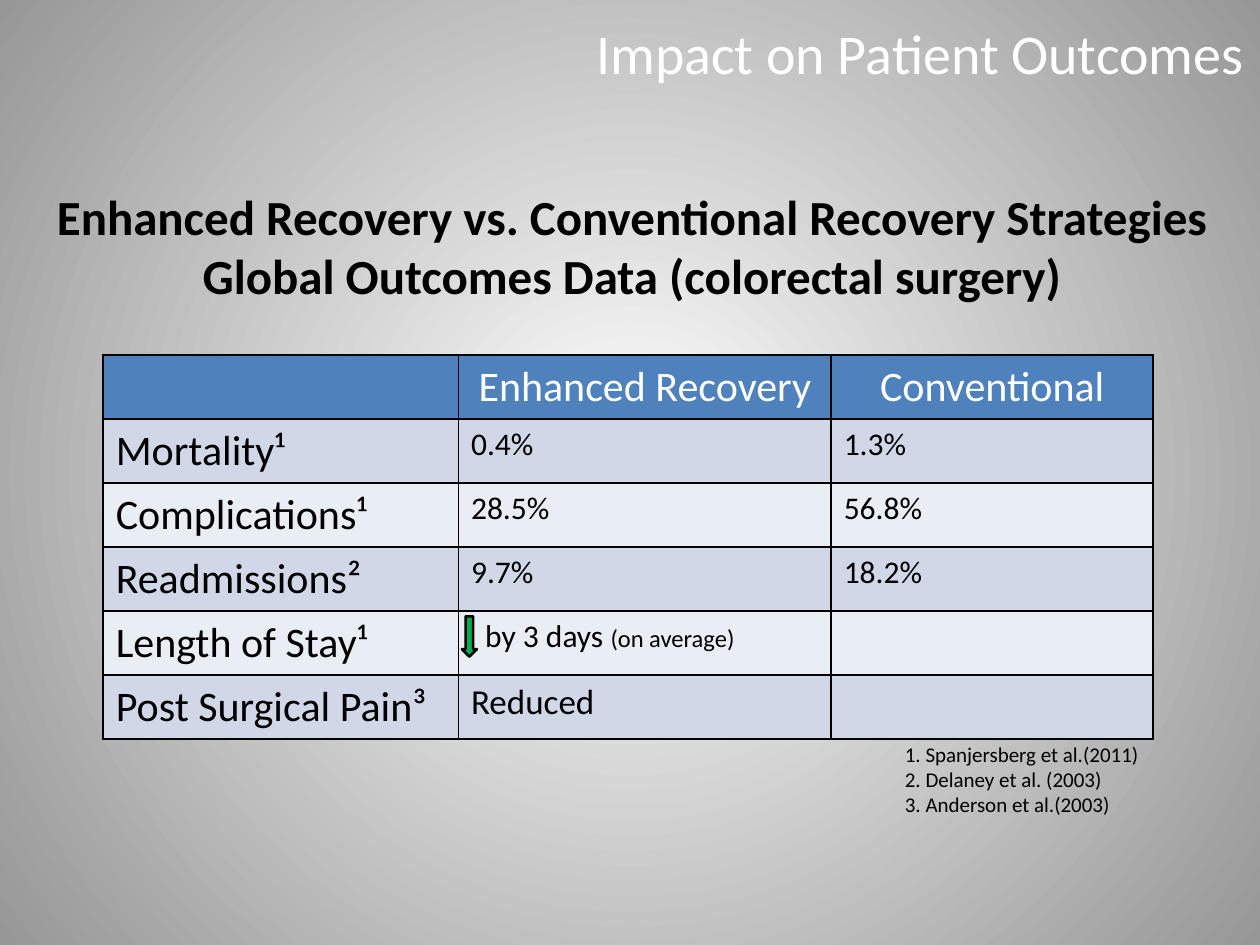
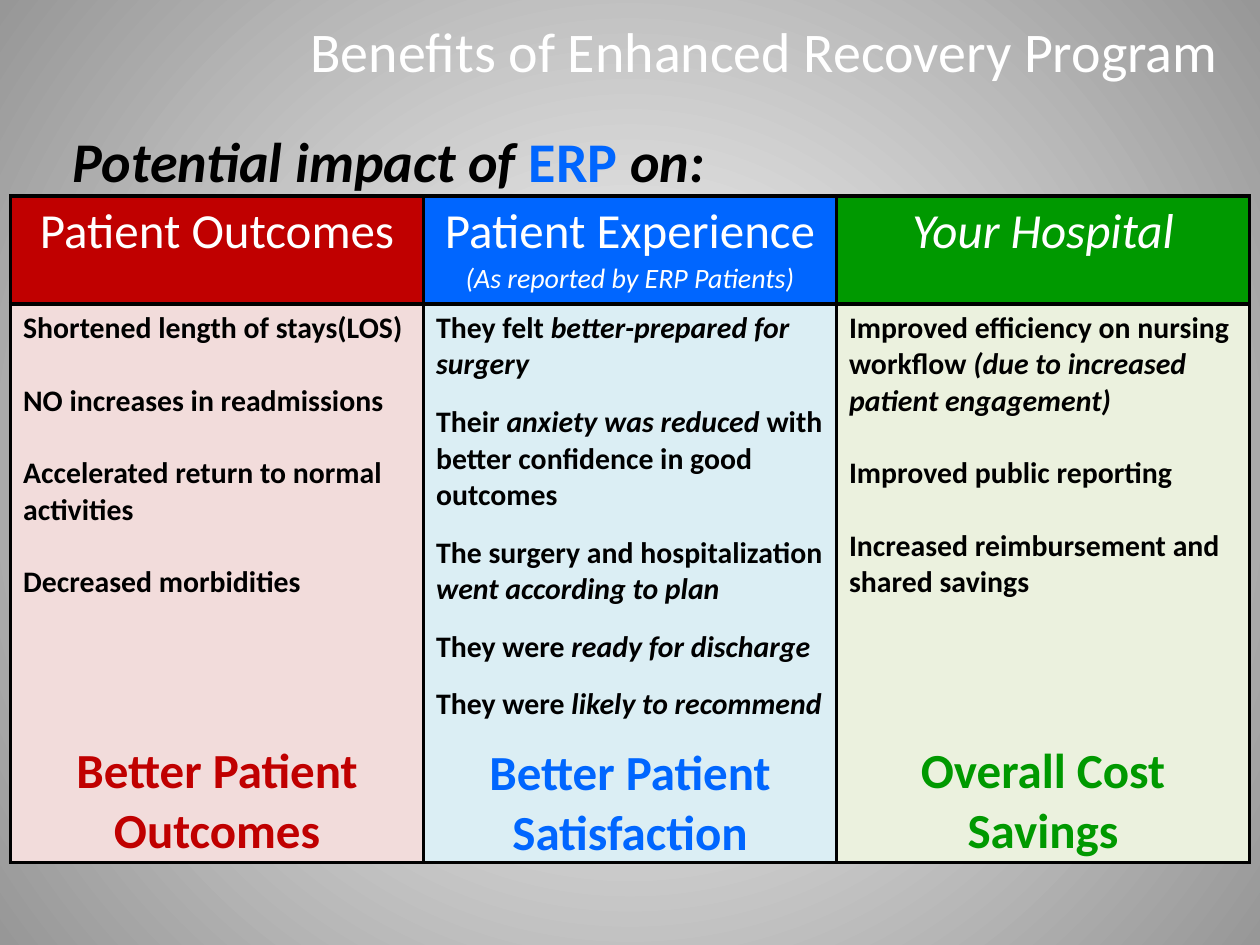
from collections import namedtuple
from dataclasses import dataclass

from lxml import etree
from pptx import Presentation
from pptx.dml.color import RGBColor
from pptx.enum.shapes import MSO_SHAPE
from pptx.enum.text import PP_ALIGN
from pptx.oxml import parse_xml
from pptx.oxml.ns import qn
from pptx.util import Pt

LEFT, CENTER, RIGHT = PP_ALIGN.LEFT, PP_ALIGN.CENTER, PP_ALIGN.RIGHT
DOWN_ARROW = MSO_SHAPE.DOWN_ARROW
A_NS = "http://schemas.openxmlformats.org/drawingml/2006/main"
P_NS = "http://schemas.openxmlformats.org/presentationml/2006/main"

Box = namedtuple("Box", "left top width height")
Para = namedtuple("Para", "runs align before", defaults=(LEFT, 0))
Benefit = namedtuple("Benefit", "heading note color tint points gap outcome outcome_gap")


@dataclass(frozen=True)
class Theme:
    font: str = "Calibri"
    black: str = "000000"
    white: str = "FFFFFF"
    edge: str = "979797"
    header: str = "4F81BD"
    bands: tuple = ("D0D8E8", "E9EDF4")
    arrow: str = "00B050"
    red: str = "C00000"
    blue: str = "0066FF"
    green: str = "009900"
    red_tint: str = "F2DCDB"
    blue_tint: str = "DBEEF4"
    green_tint: str = "EBF1DE"
    title: int = 32
    heading: int = 28
    label: int = 24
    reduced: int = 20
    value: int = 18
    point: int = 17
    note: int = 16
    aside: int = 14
    source: int = 12


THEME = Theme()


def rgb(color):
    return RGBColor.from_string(color)


def run(text, size, color=THEME.black, **style):
    return text, {"size": Pt(size), "name": THEME.font, **style}, color


def write(frame, paras):
    """Fill a text frame with paragraphs of formatted runs."""
    for index, para in enumerate(paras):
        paragraph = frame.add_paragraph() if index else frame.paragraphs[0]
        paragraph.alignment = para.align
        if para.before:
            paragraph.space_before = Pt(para.before)
        for text, style, color in para.runs:
            piece = paragraph.add_run()
            piece.text = text
            for key, value in style.items():
                setattr(piece.font, key, value)
            piece.font.color.rgb = rgb(color)


def place(box):
    return [Pt(value) for value in box]


def add_text(slide, box, paras, wrap=True):
    frame = slide.shapes.add_textbox(*place(box)).text_frame
    frame.word_wrap = wrap
    write(frame, paras)


def add_title(slide, box, text):
    add_text(slide, box, [Para([run(text, THEME.title, THEME.white)], RIGHT)])


def add_background(slide):
    """Radial gradient, light in the middle."""
    stops = "".join(
        f'<a:gs pos="{pos}"><a:srgbClr val="{color}"/></a:gs>'
        for pos, color in ((0, THEME.white), (100000, THEME.edge)))
    middle = " ".join(f'{side}="50000"' for side in "ltrb")
    slide.element.cSld.insert(0, parse_xml(
        f'<p:bg xmlns:p="{P_NS}" xmlns:a="{A_NS}"><p:bgPr><a:gradFill><a:gsLst>{stops}</a:gsLst>'
        f'<a:path path="circle"><a:fillToRect {middle}/></a:path></a:gradFill>'
        "<a:effectLst/></p:bgPr></p:bg>"))


def add_grid(slide, box, widths, heights, border):
    """Unstyled table with the same black border round every cell."""
    table = slide.shapes.add_table(len(heights), len(widths), *place(box)).table
    table.first_row = table.horz_banding = False
    for column, width in zip(table.columns, widths):
        column.width = Pt(width)
    for row, height in zip(table.rows, heights):
        row.height = Pt(height)
    for cell in table.iter_cells():
        properties = cell._tc.get_or_add_tcPr()
        for side in ("a:lnL", "a:lnR", "a:lnT", "a:lnB"):
            line = etree.SubElement(properties, qn(side), w=str(Pt(border)))
            fill = etree.SubElement(line, qn("a:solidFill"))
            etree.SubElement(fill, qn("a:srgbClr"), val=THEME.black)
    return table


def fill_cell(cell, color, paras=()):
    cell.fill.solid()
    cell.fill.fore_color.rgb = rgb(color)
    write(cell.text_frame, paras)


def add_outcomes_table(slide, box):
    widths = (203, 213, 184)
    headings = ("", "Enhanced Recovery", "Conventional")
    stay_row = 4
    records = (
        ("Mortality¹", [run("0.4%", THEME.value)], "1.3%"),
        ("Complications¹", [run("28.5%", THEME.value)], "56.8%"),
        ("Readmissions²", [run("9.7%", THEME.value)], "18.2%"),
        ("Length of Stay¹", [run("by 3 days ", THEME.value),
                             run("(on average)", THEME.aside)], ""),
        ("Post Surgical Pain³", [run("Reduced", THEME.reduced)], ""),
    )
    row_height = box.height / (len(records) + 1)
    table = add_grid(slide, box, widths, [row_height] * (len(records) + 1), 1)

    for column, heading in enumerate(headings):
        paras = [Para([run(heading, THEME.label, THEME.white)], CENTER)] if heading else ()
        fill_cell(table.cell(0, column), THEME.header, paras)
    for row, (measure, enhanced, conventional) in enumerate(records, 1):
        usual = [run(conventional, THEME.value)] if conventional else []
        for column, runs in enumerate(([run(measure, THEME.label)], enhanced, usual)):
            fill_cell(table.cell(row, column), THEME.bands[(row - 1) % 2], [Para(runs)])

    # Green arrow ahead of the shorter stay
    table.cell(stay_row, 1).margin_left = Pt(15.3)
    arrow = slide.shapes.add_shape(DOWN_ARROW, *place(Box(
        box.left + widths[0] + 2, box.top + stay_row * row_height + 3, 8.5, 23)))
    arrow.shadow.inherit = False
    arrow.fill.solid()
    arrow.fill.fore_color.rgb = rgb(THEME.arrow)
    arrow.line.color.rgb = rgb(THEME.black)
    arrow.line.width = Pt(1.5)


def add_sources(slide, box):
    sources = ("Spanjersberg et al.(2011)", "Delaney et al. (2003)", "Anderson et al.(2003)")
    add_text(slide, box, [Para([run(f"{number}. {source}", THEME.source)])
                          for number, source in enumerate(sources, 1)])


def add_outcomes_heading(slide, box):
    lines = ("Enhanced Recovery vs. Conventional Recovery Strategies",
             "Global Outcomes Data (colorectal surgery)")
    add_text(slide, box, [Para([run(line, THEME.heading, bold=True)], CENTER)
                          for line in lines], wrap=False)


def add_impact_heading(slide, box):
    pieces = (("Potential impact of ", THEME.black, True),
              ("ERP ", THEME.blue, False), ("on:", THEME.black, True))
    add_text(slide, box, [Para([run(text, THEME.title, color, bold=True, italic=italic)
                                for text, color, italic in pieces])])


def add_benefits_table(slide, box):
    # Each point is a plain part followed by an italic part, and so on in turn
    benefits = (
        Benefit("Patient Outcomes", "", THEME.red, THEME.red_tint, (
            ["Shortened length of stays(LOS)"],
            ["NO increases in readmissions"],
            ["Accelerated return to normal activities"],
            ["Decreased morbidities"],
        ), 20.7, "Better Patient Outcomes", 80.5),
        Benefit("Patient Experience", "(As reported by ERP Patients)",
                THEME.blue, THEME.blue_tint, (
            ["They felt ", "better-prepared for surgery"],
            ["Their ", "anxiety was reduced ", "with better confidence in good outcomes"],
            ["The surgery and hospitalization ", "went according to plan"],
            ["They were ", "ready for discharge"],
            ["They were ", "likely to recommend"],
        ), 12.2, "Better Patient Satisfaction", 12.2),
        Benefit("Your Hospital", "", THEME.green, THEME.green_tint, (
            ["Improved efficiency on nursing workflow ", "(due to increased patient engagement)"],
            ["Improved public reporting"],
            ["Increased reimbursement and shared savings"],
        ), 20.7, "Overall Cost Savings", 80.5),
    )
    header_height = 61.7
    table = add_grid(slide, box, [box.width / len(benefits)] * len(benefits),
                     (header_height, box.height - header_height), 2.25)
    for column, benefit in enumerate(benefits):
        italic = benefit.heading == "Your Hospital"
        head = [Para([run(benefit.heading, THEME.heading, THEME.white, italic=italic)], CENTER)]
        if benefit.note:
            head.append(Para([run(benefit.note, THEME.note, THEME.white, italic=True)], CENTER))
        fill_cell(table.cell(0, column), benefit.color, head)

        body = [Para([run(part, THEME.point, bold=True, italic=index % 2 == 1)
                      for index, part in enumerate(parts)],
                     before=benefit.gap if number else 0)
                for number, parts in enumerate(benefit.points)]
        body.append(Para([run(benefit.outcome, THEME.heading, benefit.color, bold=True)],
                         CENTER, benefit.outcome_gap))
        fill_cell(table.cell(1, column), benefit.tint, body)


def build_outcomes_slide(slide):
    add_background(slide)
    add_outcomes_table(slide, Box(59, 203, 600, 219.3))
    add_sources(slide, Box(510, 420, 150, 51))
    add_outcomes_heading(slide, Box(21, 103, 680, 75))
    add_title(slide, Box(318, 7.2, 400, 46), "Impact on Patient Outcomes")


def build_benefits_slide(slide):
    add_background(slide)
    add_title(slide, Box(169, 6, 534.5, 46), "Benefits of Enhanced Recovery Program")
    add_benefits_table(slide, Box(6, 112, 708, 380))
    add_impact_heading(slide, Box(34.5, 68.5, 642, 46))


def main():
    deck = Presentation()
    deck.slide_width, deck.slide_height = Pt(720), Pt(540)
    blank = deck.slide_layouts[6]
    for build in (build_outcomes_slide, build_benefits_slide):
        build(deck.slides.add_slide(blank))
    deck.save("out.pptx")


if __name__ == "__main__":
    main()
